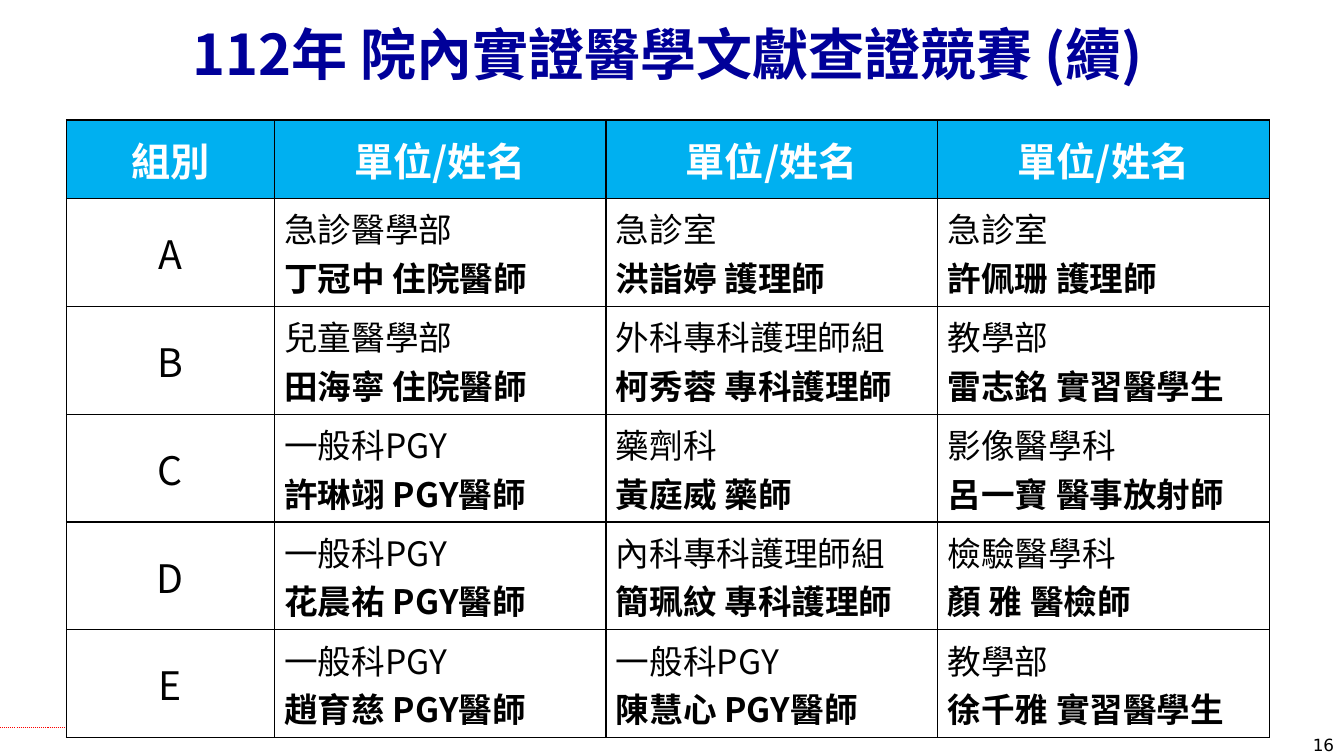
from dataclasses import dataclass

from lxml import etree
from pptx import Presentation
from pptx.dml.color import RGBColor
from pptx.enum import dml, shapes, text
from pptx.oxml import ns
from pptx.util import Inches, Pt


@dataclass(frozen=True)
class Theme:
    font: str = "Noto Sans CJK SC"
    number_font: str = "DejaVu Sans"
    navy: str = "000099"
    sky: str = "00B0F0"
    white: str = "FFFFFF"
    black: str = "000000"
    red: str = "FF0000"
    title_size: int = 40
    heading_size: int = 28
    member_size: int = 24
    number_size: int = 12


THEME = Theme()
HEADINGS = ["組別"] + ["單位/姓名"] * 3
TEAMS = {
    "A": [("急診醫學部", "丁冠中 住院醫師"), ("急診室", "洪詣婷 護理師"), ("急診室", "許佩珊 護理師")],
    "B": [("兒童醫學部", "田海寧 住院醫師"), ("外科專科護理師組", "柯秀蓉 專科護理師"), ("教學部", "雷志銘 實習醫學生")],
    "C": [("一般科PGY", "許琳翊 PGY醫師"), ("藥劑科", "黃庭威 藥師"), ("影像醫學科", "呂一寶 醫事放射師")],
    "D": [("一般科PGY", "花晨祐 PGY醫師"), ("內科專科護理師組", "簡珮紋 專科護理師"), ("檢驗醫學科", "顏 雅 醫檢師")],
    "E": [("一般科PGY", "趙育慈 PGY醫師"), ("一般科PGY", "陳慧心 PGY醫師"), ("教學部", "徐千雅 實習醫學生")],
}


def add_span(para, words, size, color, bold=False, font=THEME.font):
    span = para.add_run()
    span.text = words
    span.font.name = font
    span.font.size = Pt(size)
    span.font.bold = bold
    span.font.color.rgb = RGBColor.from_string(color)
    properties = span.font._element
    east_asian = etree.SubElement(properties, ns.qn("a:ea"), typeface=font)
    properties.find(ns.qn("a:latin")).addnext(east_asian)


def add_title(page, words):
    title = page.shapes.title
    title.left, title.top = Inches(0.79), Inches(0)
    title.width, title.height = Inches(11.67), Inches(0.91)
    frame = title.text_frame
    frame.vertical_anchor = text.MSO_ANCHOR.BOTTOM
    frame.auto_size = text.MSO_AUTO_SIZE.NONE
    para = frame.paragraphs[0]
    para.alignment = text.PP_ALIGN.CENTER
    add_span(para, words, THEME.title_size, THEME.navy, True)


def add_dotted_line(page):
    line = page.shapes.add_connector(
        shapes.MSO_CONNECTOR.STRAIGHT, Inches(0), Inches(7.22), Inches(10.11), Inches(7.22))
    line.line.color.rgb = RGBColor.from_string(THEME.red)
    line.line.width = Pt(0.75)
    line.line.dash_style = dml.MSO_LINE.ROUND_DOT
    etree.SubElement(line._element.spPr, ns.qn("a:effectLst"))


def add_page_number(page, number):
    box = page.shapes.add_textbox(Inches(10.44), Inches(7.24), Inches(2.89), Inches(0.52))
    box.text_frame.word_wrap = True
    para = box.text_frame.paragraphs[0]
    para.alignment = text.PP_ALIGN.RIGHT
    add_span(para, number, THEME.number_size, THEME.black, font=THEME.number_font)


def add_borders(cell):
    properties = cell._tc.get_or_add_tcPr()
    for position, side in enumerate(("a:lnL", "a:lnR", "a:lnT", "a:lnB")):
        border = etree.Element(ns.qn(side), w=str(Pt(1)))
        fill = etree.SubElement(border, ns.qn("a:solidFill"))
        etree.SubElement(fill, ns.qn("a:srgbClr"), val=THEME.black)
        properties.insert(position, border)


def format_cell(cell, fill=None):
    cell.vertical_anchor = text.MSO_ANCHOR.MIDDLE
    if fill:
        cell.fill.solid()
        cell.fill.fore_color.rgb = RGBColor.from_string(fill)
    else:
        cell.fill.background()
    add_borders(cell)


def fill_label(cell, words, color, bold):
    para = cell.text_frame.paragraphs[0]
    para.alignment = text.PP_ALIGN.CENTER
    add_span(para, words, THEME.heading_size, color, bold)


def fill_member(cell, unit, person):
    frame = cell.text_frame
    add_span(frame.paragraphs[0], unit, THEME.member_size, THEME.black)
    add_span(frame.add_paragraph(), person, THEME.member_size, THEME.black, True)


def add_team_table(page):
    table = page.shapes.add_table(
        len(TEAMS) + 1, len(HEADINGS), Inches(0.66), Inches(1.19), Inches(11.93), Inches(6.13)).table
    table.first_row = table.horz_banding = False
    for index, column in enumerate(table.columns):
        column.width = Inches(3.29 if index else 2.06)
    for index, row in enumerate(table.rows):
        row.height = Inches(1.07 if index else 0.78)
    for column, heading in enumerate(HEADINGS):
        cell = table.cell(0, column)
        format_cell(cell, THEME.sky)
        fill_label(cell, heading, THEME.white, True)
    for row, (team, members) in enumerate(TEAMS.items(), 1):
        fill = THEME.white if row == len(TEAMS) else None
        for column in range(len(HEADINGS)):
            format_cell(table.cell(row, column), fill)
        fill_label(table.cell(row, 0), team, THEME.black, False)
        for column, member in enumerate(members, 1):
            fill_member(table.cell(row, column), *member)


def main():
    deck = Presentation()
    deck.slide_width, deck.slide_height = Inches(13.33), Inches(7.5)
    page = deck.slides.add_slide(deck.slide_layouts[5])
    add_dotted_line(page)
    add_page_number(page, "16")
    add_title(page, "112年 院內實證醫學文獻查證競賽 (續)")
    add_team_table(page)
    deck.save("out.pptx")


if __name__ == "__main__":
    main()
